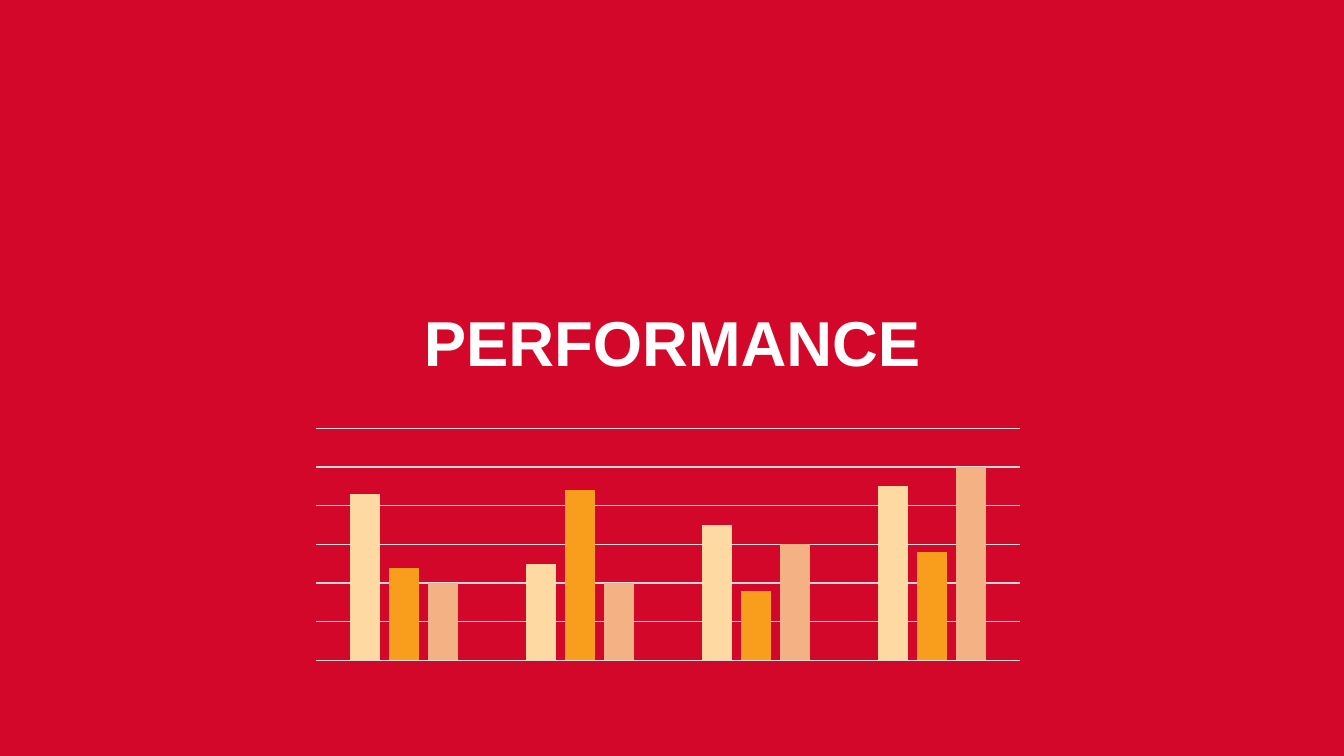
from lxml.etree import SubElement
from pptx import Presentation
from pptx.chart.data import CategoryChartData
from pptx.dml.color import RGBColor
from pptx.enum.chart import XL_CHART_TYPE as ChartType
from pptx.enum.text import MSO_ANCHOR as Anchor, PP_ALIGN as Align
from pptx.oxml.ns import qn
from pptx.util import Cm, Pt

# Content
TITLE = "PERFORMANCE"
CATEGORIES = ["1", "2", "3", "4"]
SERIES = [
    ("Series 1", (86, 50, 70, 90), "FFD9A2"),
    ("Series 2", (48, 88, 36, 56), "F99D1C"),
    ("Series 3", (40, 40, 60, 100), "F4B183"),
]
PLOT_LAYOUT = {"x": 0.045, "y": 0.1, "w": 0.9, "h": 0.86}


def color(hex_value):
    return RGBColor.from_string(hex_value)


def set_plot_layout(chart, fractions):
    """Fix the inner plot area as fractions of the chart frame."""
    plot_area = chart.plots[0]._element.getparent()
    layout = plot_area.find(qn("c:layout"))
    if layout is None:
        layout = SubElement(plot_area, qn("c:layout"))
        plot_area.insert(0, layout)
    manual = SubElement(layout, qn("c:manualLayout"))
    settings = [("layoutTarget", "inner"), ("xMode", "edge"), ("yMode", "edge")]
    for tag, value in settings + list(fractions.items()):
        SubElement(manual, qn(f"c:{tag}")).set("val", str(value))


# Slide
presentation = Presentation()
presentation.slide_width, presentation.slide_height = Cm(25.4), Cm(14.29)
slide = presentation.slides.add_slide(presentation.slide_layouts[6])
slide.background.fill.solid()
slide.background.fill.fore_color.rgb = color("D2072A")

# Title
title = slide.shapes.add_textbox(Cm(3.18), Cm(2.34), Cm(19.05), Cm(4.98))
text_frame = title.text_frame
text_frame.word_wrap = True
text_frame.vertical_anchor = Anchor.BOTTOM
text_frame.text = TITLE
paragraph = text_frame.paragraphs[0]
paragraph.alignment = Align.CENTER
paragraph.line_spacing = 0.9
font = paragraph.runs[0].font
font.name, font.size, font.bold = "Arial", Pt(34), True
font.color.rgb = color("FFFFFF")

# Chart
data = CategoryChartData()
data.categories = CATEGORIES
for name, values, _ in SERIES:
    data.add_series(name, values)
chart = slide.shapes.add_chart(
    ChartType.COLUMN_CLUSTERED, Cm(5.31), Cm(7.59), Cm(14.78), Cm(5.1), data
).chart
chart.has_title = False
chart.has_legend = False
chart.font.name, chart.font.size = "Calibri", Pt(10)
chart.font.color.rgb = color("000000")
set_plot_layout(chart, PLOT_LAYOUT)

# Axes and gridlines
chart.category_axis.visible = False
value_axis = chart.value_axis
value_axis.visible = False
value_axis.minimum_scale, value_axis.maximum_scale = 0, 120
value_axis.major_unit = 20
value_axis.has_major_gridlines = True
grid_line = value_axis.major_gridlines.format.line
grid_line.color.rgb = color("D9D9D9")
grid_line.width = Pt(0.75)

# Columns
plot = chart.plots[0]
plot.gap_width, plot.overlap = 219, -27
plot.vary_by_categories = False
for series, (_, _, fill_color) in zip(plot.series, SERIES):
    series.format.fill.solid()
    series.format.fill.fore_color.rgb = color(fill_color)

presentation.save("out.pptx")
